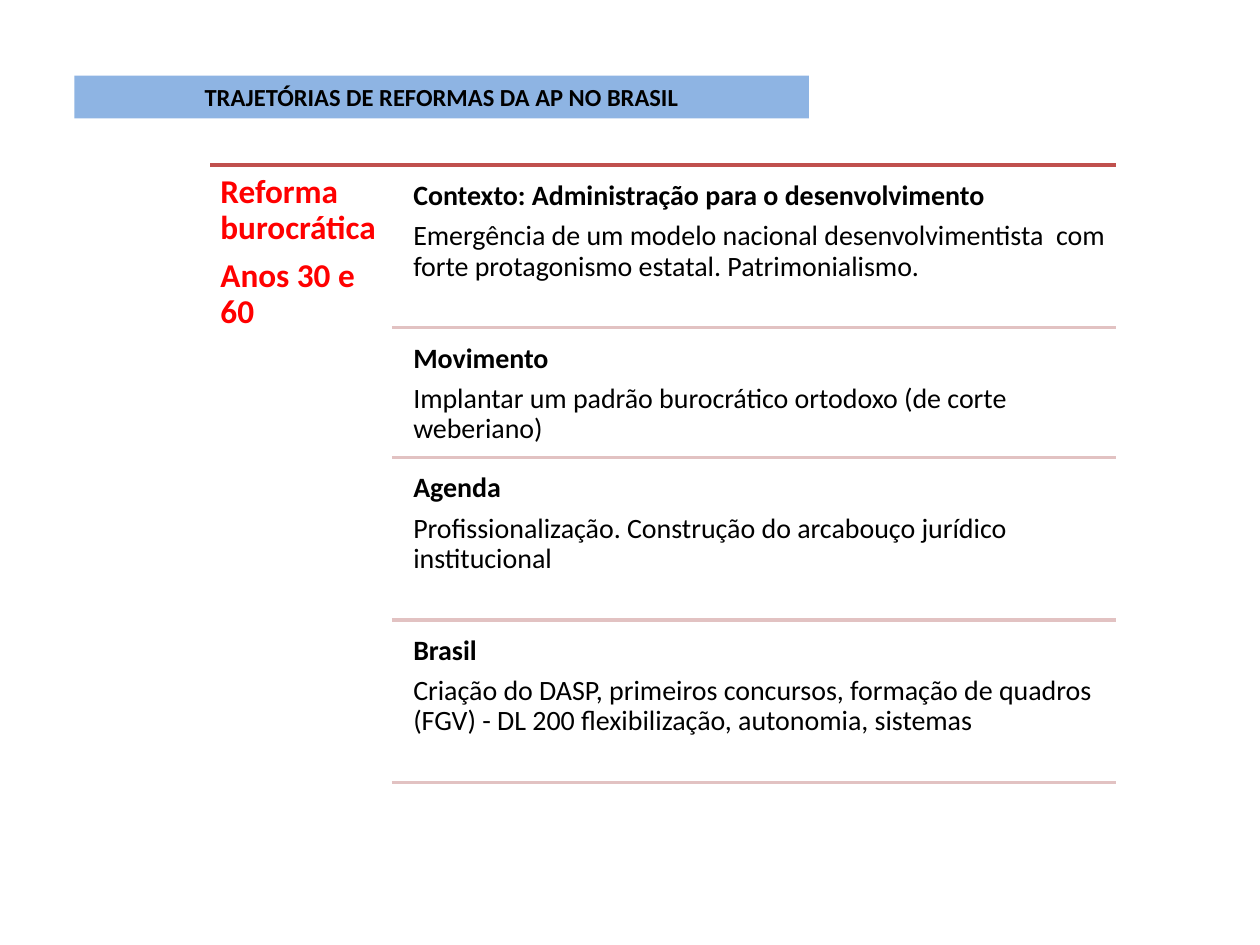
from dataclasses import dataclass

from lxml import etree
from pptx import Presentation
from pptx.dml.color import RGBColor
from pptx.enum.shapes import MSO_CONNECTOR, MSO_SHAPE
from pptx.enum.text import MSO_ANCHOR, MSO_AUTO_SIZE, PP_ALIGN
from pptx.oxml.ns import qn
from pptx.slide import Slide
from pptx.util import Inches, Pt

STRAIGHT = MSO_CONNECTOR.STRAIGHT
RECTANGLE = MSO_SHAPE.RECTANGLE
TOP = MSO_ANCHOR.TOP
MIDDLE = MSO_ANCHOR.MIDDLE
CENTER = PP_ALIGN.CENTER
FIT_SHAPE = MSO_AUTO_SIZE.SHAPE_TO_FIT_TEXT

BLACK = RGBColor(0x00, 0x00, 0x00)
RED = RGBColor(0xFF, 0x00, 0x00)
BANNER_BLUE = RGBColor(0x8E, 0xB4, 0xE3)
DARK_RED = RGBColor(0xC0, 0x50, 0x4D)
PALE_RED = RGBColor(0xE2, 0xC2, 0xC2)

FONT = "Calibri"
LEFT, RIGHT, TABLE_TOP = 1.67, 8.86, 1.31
PERIOD_WIDTH, PERIOD_HEIGHT = 1.44, 4.96
DIVIDER_LEFT = LEFT + PERIOD_WIDTH
TOPIC_LEFT = 3.21
TOPIC_GAP = 0.06


@dataclass(frozen=True)
class Line:
    text: str
    bold: bool = True


@dataclass(frozen=True)
class Topic:
    heading: str
    body: str
    height: float = 1.29


PERIOD = [Line("Reforma burocrática"), Line("Anos 30 e 60")]
TOPICS = [
    Topic(
        "Contexto: Administração para o desenvolvimento",
        "Emergência de um modelo nacional desenvolvimentista  com forte "
        "protagonismo estatal. Patrimonialismo.",
    ),
    Topic(
        "Movimento",
        "Implantar um padrão burocrático ortodoxo (de corte weberiano)",
        height=1.03,
    ),
    Topic(
        "Agenda",
        "Profissionalização. Construção do arcabouço jurídico institucional",
    ),
    Topic(
        "Brasil",
        "Criação do DASP, primeiros concursos, formação de quadros (FGV) - "
        "DL 200 flexibilização, autonomia, sistemas",
    ),
]


def add_rule(slide: Slide, left: float, top: float, color: RGBColor) -> None:
    """Draw a horizontal line from left to the right edge of the table."""
    rule = slide.shapes.add_connector(
        STRAIGHT, Inches(left), Inches(top), Inches(RIGHT), Inches(top)
    )
    rule.line.color.rgb = color
    rule.line.width = Pt(2)
    etree.SubElement(rule._element.spPr, qn("a:effectLst"))


def add_text(
    slide: Slide, left: float, top: float, width: float, height: float,
    lines: list[Line], size: float, color: RGBColor, inset: float,
) -> None:
    box = slide.shapes.add_textbox(
        Inches(left), Inches(top), Inches(width), Inches(height)
    )
    frame = box.text_frame
    frame.word_wrap = True
    frame.vertical_anchor = TOP
    frame.margin_left = frame.margin_right = Inches(inset)
    frame.margin_top = frame.margin_bottom = Inches(inset)
    for index, line in enumerate(lines):
        paragraph = frame.add_paragraph() if index else frame.paragraphs[0]
        paragraph.text = line.text
        paragraph.line_spacing = 0.9
        paragraph.space_after = Pt(round(size * 0.36, 1))
        paragraph.font.name = FONT
        paragraph.font.size = Pt(size)
        paragraph.font.bold = line.bold
        paragraph.font.color.rgb = color


def add_banner(slide: Slide, text: str) -> None:
    banner = slide.shapes.add_shape(
        RECTANGLE, Inches(0.59), Inches(0.6), Inches(5.83), Inches(0.34)
    )
    banner.shadow.inherit = False
    banner.fill.solid()
    banner.fill.fore_color.rgb = BANNER_BLUE
    banner.line.fill.background()
    frame = banner.text_frame
    frame.word_wrap = True
    frame.auto_size = FIT_SHAPE
    frame.vertical_anchor = MIDDLE
    paragraph = frame.paragraphs[0]
    paragraph.text = text
    paragraph.alignment = CENTER
    paragraph.font.name = FONT
    paragraph.font.size = Pt(14)
    paragraph.font.bold = True
    paragraph.font.color.rgb = BLACK


def main() -> None:
    presentation = Presentation()
    presentation.slide_width = Inches(10)
    presentation.slide_height = Inches(7.5)
    slide = presentation.slides.add_slide(presentation.slide_layouts[6])

    add_rule(slide, LEFT, TABLE_TOP, DARK_RED)
    add_text(slide, LEFT, TABLE_TOP, PERIOD_WIDTH, PERIOD_HEIGHT,
             PERIOD, 19, RED, 0.08)

    top = TABLE_TOP
    for topic in TOPICS:
        lines = [Line(topic.heading), Line(topic.body, bold=False)]
        add_text(slide, TOPIC_LEFT, top + TOPIC_GAP, RIGHT - TOPIC_LEFT,
                 topic.height - TOPIC_GAP, lines, 16, BLACK, 0.07)
        top += topic.height
        add_rule(slide, DIVIDER_LEFT, top, PALE_RED)

    add_banner(slide, "TRAJETÓRIAS DE REFORMAS DA AP NO BRASIL")
    presentation.save("out.pptx")


if __name__ == "__main__":
    main()
